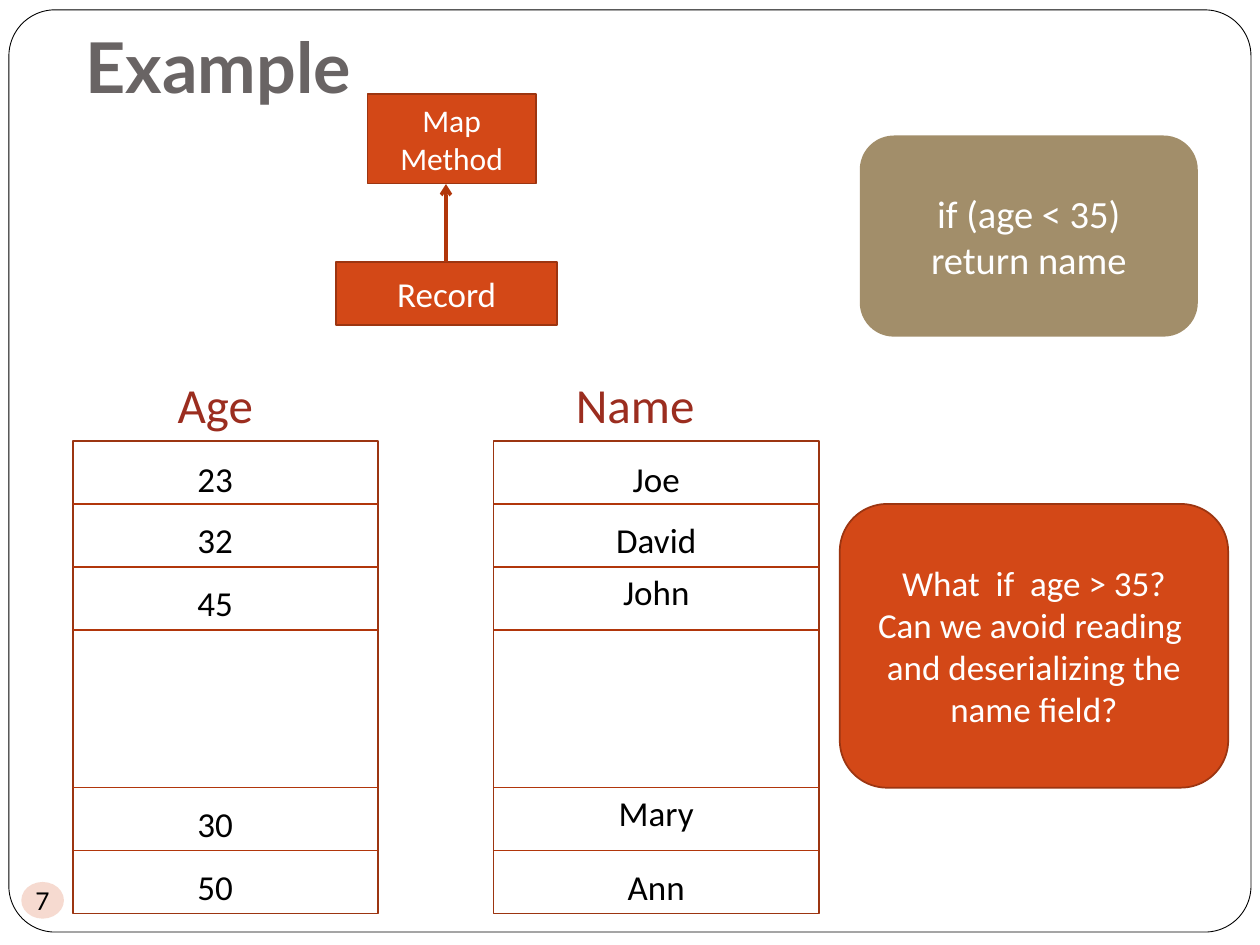
from dataclasses import dataclass

from lxml import etree
from pptx import Presentation
from pptx.dml.color import RGBColor
from pptx.enum.shapes import MSO_CONNECTOR, MSO_SHAPE
from pptx.enum.text import MSO_ANCHOR, PP_ALIGN
from pptx.oxml.ns import qn
from pptx.util import Cm, Pt

RECTANGLE = MSO_SHAPE.RECTANGLE
ROUNDED = MSO_SHAPE.ROUNDED_RECTANGLE
OVAL = MSO_SHAPE.OVAL
STRAIGHT = MSO_CONNECTOR.STRAIGHT
LEFT, CENTER = PP_ALIGN.LEFT, PP_ALIGN.CENTER
TOP, MIDDLE, BOTTOM = MSO_ANCHOR.TOP, MSO_ANCHOR.MIDDLE, MSO_ANCHOR.BOTTOM


@dataclass(frozen=True)
class Theme:
    white: str = "FFFFFF"
    black: str = "000000"
    title: str = "696464"
    heading: str = "9B2D1F"
    accent: str = "D34817"
    outline: str = "9C3511"
    rule: str = "B1360B"
    sand: str = "A28E6A"
    title_font: str = "Lato"
    body_font: str = "Calibri"
    title_size: int = 40
    heading_size: int = 28
    code_size: int = 22
    body_size: int = 20
    small_size: int = 18
    number_size: int = 14


def write_text(shape, text, *, font, size, color, bold=False, align=CENTER,
               anchor=TOP, margins=(0.25, 0.13, 0.25, 0.13), wrap=True):
    """Fill a shape with text, one paragraph per line; margins in cm."""
    frame = shape.text_frame
    frame.word_wrap = wrap
    frame.vertical_anchor = anchor
    (frame.margin_left, frame.margin_top,
     frame.margin_right, frame.margin_bottom) = map(Cm, margins)
    frame.text = text
    for paragraph in frame.paragraphs:
        paragraph.alignment = align
        paragraph.font.name = font
        paragraph.font.size = Pt(size)
        paragraph.font.bold = bold
        paragraph.font.color.rgb = RGBColor.from_string(color)


class SlideBuilder:
    def __init__(self, slide, theme):
        self.slide = slide
        self.theme = theme

    def text(self, text, box, **style):
        shape = self.slide.shapes.add_textbox(*map(Cm, box))
        defaults = dict(font=self.theme.body_font, size=self.theme.body_size,
                        color=self.theme.black)
        write_text(shape, text, **(defaults | style))

    def shape(self, kind, box, fill=None, line=None, width=1, text=None,
              corner=None, opacity=None, **style):
        shape = self.slide.shapes.add_shape(kind, *map(Cm, box))
        shape.shadow.inherit = False
        if corner is not None:
            shape.adjustments[0] = corner
        if fill:
            shape.fill.solid()
            shape.fill.fore_color.rgb = RGBColor.from_string(fill)
        else:
            shape.fill.background()
        if opacity is not None:
            color = shape._element.spPr.find(".//" + qn("a:srgbClr"))
            etree.SubElement(color, qn("a:alpha"), val=str(opacity * 1000))
        if line:
            shape.line.color.rgb = RGBColor.from_string(line)
            shape.line.width = Pt(width)
        else:
            shape.line.fill.background()
        if text:
            defaults = dict(font=self.theme.body_font, size=self.theme.body_size,
                            color=self.theme.white, anchor=MIDDLE)
            write_text(shape, text, **(defaults | style))

    def line(self, start, end, width=0.75, arrow=False):
        connector = self.slide.shapes.add_connector(
            STRAIGHT, *map(Cm, (*start, *end)))
        connector.line.color.rgb = RGBColor.from_string(self.theme.rule)
        connector.line.width = Pt(width)
        properties = connector._element.spPr
        if arrow:
            etree.SubElement(properties.find(qn("a:ln")),
                             qn("a:tailEnd"), type="arrow")
        etree.SubElement(properties, qn("a:effectLst"))

    def column(self, left, width, heading, heading_box, label_left, labels):
        """Draw a column of cells; labels are (text, top offset in rows)."""
        top, row = 8.89, 1.27
        self.shape(RECTANGLE, (left, top, width, 7.5 * row),
                   line=self.theme.outline)
        for step in (1, 2, 3, 5.5, 6.5):
            y = top + step * row
            self.line((left, y), (left + width, y))
        self.text(heading, heading_box, size=self.theme.heading_size,
                  color=self.theme.heading)
        for text, offset in labels:
            self.text(text, (label_left, top + offset * row, 3.6, 1.12))


def main():
    presentation = Presentation()
    presentation.slide_width, presentation.slide_height = Cm(25.4), Cm(19.05)
    theme = Theme()
    slide = presentation.slides.add_slide(presentation.slide_layouts[6])
    builder = SlideBuilder(slide, theme)

    builder.shape(ROUNDED, (0.18, 0.2, 25.04, 18.59), fill=theme.white,
                  line=theme.black, width=0.5, corner=0.05)
    builder.text("Example", (1.48, 0.2, 21.59, 2.21), font=theme.title_font,
                 size=theme.title_size, color=theme.title, bold=True,
                 align=LEFT, anchor=BOTTOM, margins=(0.25, 0.13, 0.25, 0.25))

    builder.column(1.48, 6.14, "Age", (2.97, 7.42, 2.74, 1.45), 2.54,
                   [("23", 0.16), ("32", 1.13), ("45", 2.13),
                    ("30", 5.63), ("50", 6.63)])
    builder.column(9.95, 6.56, "Name", (10.8, 7.42, 4.01, 1.45), 11.43,
                   [("Joe", 0.16), ("David", 1.13), ("John", 1.96),
                    ("Mary", 5.46), ("Ann", 6.63)])

    accent_box = dict(fill=theme.accent, line=theme.outline)
    builder.shape(RECTANGLE, (6.78, 5.29, 4.45, 1.27), text="Record",
                  **accent_box)
    builder.line((8.99, 5.29), (8.99, 3.71), width=2, arrow=True)
    builder.shape(RECTANGLE, (7.41, 1.9, 3.39, 1.8), text="Map Method",
                  size=theme.small_size, **accent_box)

    builder.shape(ROUNDED, (17.35, 2.75, 6.78, 4.02), fill=theme.sand,
                  line=theme.sand, text="if (age < 35)\nreturn name",
                  size=theme.code_size)
    builder.shape(ROUNDED, (16.93, 10.16, 7.83, 5.72),
                  text="What  if  age > 35?\nCan we avoid reading  and "
                       "deserializing the name field?", **accent_box)

    builder.shape(OVAL, (0.43, 17.78, 0.86, 0.74), fill=theme.accent,
                  opacity=20, text="7", font=theme.title_font,
                  size=theme.number_size, color=theme.black,
                  margins=(0, 0, 0, 0), wrap=False)

    presentation.save("out.pptx")


if __name__ == "__main__":
    main()
